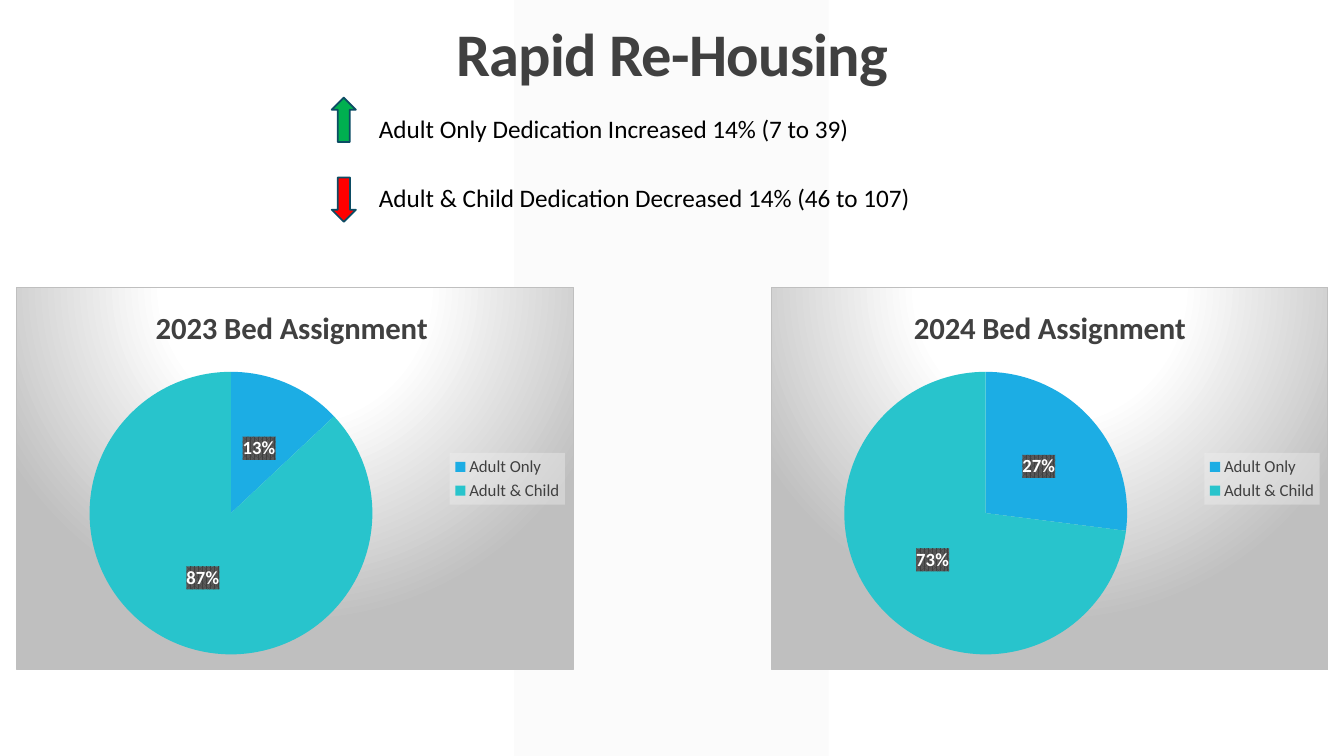
import lxml.etree
import pptx
import pptx.chart.data
import pptx.dml.color
import pptx.enum.chart
import pptx.enum.shapes
import pptx.enum.text
import pptx.oxml
import pptx.oxml.ns
import pptx.util

Cm, Pt = pptx.util.Cm, pptx.util.Pt
RGBColor = pptx.dml.color.RGBColor
qn = pptx.oxml.ns.qn

BLACK = RGBColor(0x00, 0x00, 0x00)
WHITE = RGBColor(0xFF, 0xFF, 0xFF)
CHARCOAL = RGBColor(0x40, 0x40, 0x40)
DIM_GRAY = RGBColor(0x59, 0x59, 0x59)
SILVER = RGBColor(0xBF, 0xBF, 0xBF)
PALE_GRAY = RGBColor(0xF2, 0xF2, 0xF2)
GREEN = RGBColor(0x00, 0xB0, 0x50)
RED = RGBColor(0xFF, 0x00, 0x00)
NAVY = RGBColor(0x0C, 0x4C, 0x64)
BLUE = RGBColor(0x1C, 0xAD, 0xE4)
TEAL = RGBColor(0x28, 0xC4, 0xCC)


def solid_xml(color, alpha=100):
    return (f'<a:solidFill><a:srgbClr val="{color}"><a:alpha val="{alpha * 1000}"/>'
            '</a:srgbClr></a:solidFill>')


def chart_format(content):
    """Return a c:spPr element that holds the given DrawingML."""
    return pptx.oxml.parse_xml(
        f'<c:spPr {pptx.oxml.ns.nsdecls("c", "a")}>{content}</c:spPr>')


PANEL_FORMAT = (
    '<a:gradFill><a:gsLst>'
    + "".join(f'<a:gs pos="{stop * 1000}"><a:srgbClr val="{color}"/></a:gs>'
              for stop, color in ((0, WHITE), (39, WHITE), (100, SILVER)))
    + '</a:gsLst><a:path path="circle">'
    '<a:fillToRect l="50000" t="-80000" r="50000" b="180000"/></a:path></a:gradFill>'
    f'<a:ln w="9525">{solid_xml(SILVER)}</a:ln>')
LABEL_FORMAT = (
    f'<a:pattFill prst="pct75"><a:fgClr><a:srgbClr val="{CHARCOAL}"/></a:fgClr>'
    f'<a:bgClr><a:srgbClr val="{DIM_GRAY}"/></a:bgClr></a:pattFill>')


class HousingSlide:
    font_name = "Calibri"

    def __init__(self, slide):
        self.slide = slide

    def style_font(self, font, size, color, bold=False):
        font.name, font.size, font.bold = self.font_name, Pt(size), bold
        font.color.rgb = color

    def text(self, words, left, top, width, height, *, size=18, color=BLACK,
             bold=False, align=pptx.enum.text.PP_ALIGN.LEFT,
             anchor=pptx.enum.text.MSO_ANCHOR.TOP, line_spacing=1.0, tracking=0):
        frame = self.slide.shapes.add_textbox(
            Cm(left), Cm(top), Cm(width), Cm(height)).text_frame
        frame.word_wrap = True
        frame.vertical_anchor = anchor
        paragraph = frame.paragraphs[0]
        paragraph.alignment, paragraph.line_spacing = align, line_spacing
        run = paragraph.add_run()
        run.text = words
        self.style_font(run.font, size, color, bold)
        if tracking:
            run.font._element.set("spc", str(int(tracking * 100)))

    def shape(self, kind, left, top, width, height, fill):
        shape = self.slide.shapes.add_shape(
            kind, Cm(left), Cm(top), Cm(width), Cm(height))
        shape.shadow.inherit = False
        shape.fill.solid()
        shape.fill.fore_color.rgb = fill
        return shape

    def band(self, left, width, height):
        """Draw the translucent stripe behind the content."""
        stripe = self.shape(pptx.enum.shapes.MSO_SHAPE.PARALLELOGRAM,
                            left, 0, width, height, PALE_GRAY)
        stripe.adjustments[0] = 0
        stripe.line.fill.background()
        tint = stripe._element.spPr.find(".//" + qn("a:srgbClr"))
        lxml.etree.SubElement(tint, qn("a:alpha")).set("val", "30000")

    def arrow(self, left, top, fill, rotation):
        arrow = self.shape(pptx.enum.shapes.MSO_SHAPE.UP_ARROW,
                           left, top, 0.61, 1.12, fill)
        arrow.rotation = rotation
        arrow.line.color.rgb = NAVY
        arrow.line.width = Pt(1.25)

    def pie(self, title, shares, left, top, width, height):
        data = pptx.chart.data.CategoryChartData()
        data.categories = ["Adult Only", "Adult & Child"]
        data.add_series(title, shares)
        chart = self.slide.shapes.add_chart(
            pptx.enum.chart.XL_CHART_TYPE.PIE,
            Cm(left), Cm(top), Cm(width), Cm(height), data).chart
        self.style_font(chart.font, 10, BLACK)
        chart._chartSpace.chart.addnext(chart_format(PANEL_FORMAT))

        chart.has_title = True
        heading = chart.chart_title.text_frame.paragraphs[0].add_run()
        heading.text = title
        self.style_font(heading.font, 22, CHARCOAL, bold=True)
        chart.chart_title.include_in_layout = False

        chart.has_legend = True
        legend = chart.legend
        legend.position = pptx.enum.chart.XL_LEGEND_POSITION.RIGHT
        legend.include_in_layout = False
        self.style_font(legend.font, 12, CHARCOAL)
        legend._element.find(qn("c:txPr")).addprevious(
            chart_format(solid_xml(PALE_GRAY, 39)))

        plot = chart.plots[0]
        plot.vary_by_categories = True
        for index, color in enumerate((BLUE, TEAL)):
            slice_format = plot.series[0].points[index].format
            slice_format.fill.solid()
            slice_format.fill.fore_color.rgb = color
            slice_format.line.fill.background()
        self.percent_labels(plot.series[0].data_labels)
        self.place_plot(chart, x=0.13, y=0.22, w=0.51, h=0.74)

    def percent_labels(self, labels):
        labels.show_value = False
        labels.show_percentage = True
        labels.number_format = "0%"
        labels.number_format_is_linked = False
        labels.position = pptx.enum.chart.XL_LABEL_POSITION.CENTER
        self.style_font(labels.font, 13.3, WHITE, bold=True)
        labels._element.find(qn("c:txPr")).addprevious(chart_format(LABEL_FORMAT))

    def place_plot(self, chart, **fractions):
        """Set the inner plot area as fractions of the chart."""
        plot_area = chart._chartSpace.chart.plotArea
        for automatic in plot_area.findall(qn("c:layout")):
            plot_area.remove(automatic)
        settings = {"layoutTarget": "inner", "xMode": "edge", "yMode": "edge", **fractions}
        layout = "".join(f'<c:{key} val="{value}"/>' for key, value in settings.items())
        plot_area.insert(0, pptx.oxml.parse_xml(
            f'<c:layout {pptx.oxml.ns.nsdecls("c")}><c:manualLayout>{layout}'
            '</c:manualLayout></c:layout>'))


def main():
    presentation = pptx.Presentation()
    presentation.slide_width, presentation.slide_height = Cm(33.87), Cm(19.05)
    page = HousingSlide(presentation.slides.add_slide(presentation.slide_layouts[6]))

    page.band(12.96, 7.92, 19.05)
    page.text("Rapid Re-Housing", 0, 0.36, 33.87, 2.03, size=43.2, color=CHARCOAL,
              bold=True, align=pptx.enum.text.PP_ALIGN.CENTER,
              anchor=pptx.enum.text.MSO_ANCHOR.BOTTOM, line_spacing=0.9, tracking=-0.5)

    changes = (
        ("Adult Only Dedication Increased 14% (7 to 39)", 2.74, 2.46, GREEN, 0),
        ("Adult & Child Dedication Decreased 14% (46 to 107)", 4.47, 4.47, RED, 180),
    )
    for statement, text_top, arrow_top, color, rotation in changes:
        page.arrow(8.36, arrow_top, color, rotation)
        page.text(statement, 9.3, text_top, 16.5, 1.02)

    assignments = (
        ("2023 Bed Assignment ", (13, 87), 0.41),
        ("2024 Bed Assignment", (27, 73), 19.43),
    )
    for title, shares, left in assignments:
        page.pie(title, shares, left, 7.24, 14.05, 9.65)

    presentation.save("out.pptx")


if __name__ == "__main__":
    main()
